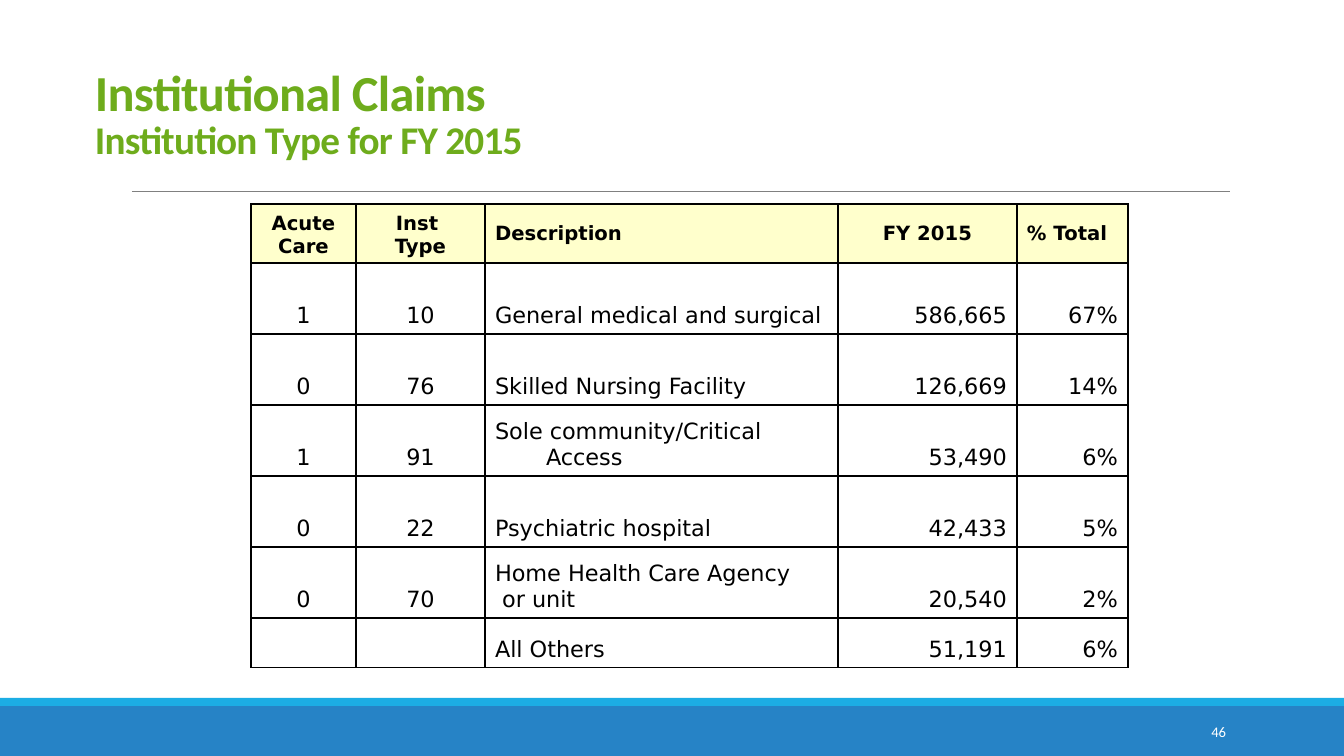
import pptx
import pptx.util
import pptx.dml.color
import pptx.enum.text
import pptx.enum.shapes
import pptx.oxml.ns
import lxml.etree

RGB = pptx.dml.color.RGBColor
ALIGN = pptx.enum.text.PP_ALIGN
ANCHOR = pptx.enum.text.MSO_ANCHOR

BLUE = RGB(0x26, 0x83, 0xC6)
SKY = RGB(0x1C, 0xAD, 0xE4)
GREEN = RGB(0x6E, 0xAC, 0x1C)
GRAY = RGB(0x80, 0x80, 0x80)
CREAM = RGB(0xFF, 0xFF, 0xCC)
WHITE = RGB(0xFF, 0xFF, 0xFF)
BLACK = RGB(0, 0, 0)

TITLE = "Institutional Claims\vInstitution Type for FY 2015"
PAGE = "46"
HEAD = ["Acute\nCare", "Inst \nType", "Description", "FY 2015", "% Total"]
CLAIMS = [
    ("1", "10", "General medical and surgical", "586,665", "67%"),
    ("0", "76", "Skilled Nursing Facility", "126,669", "14%"),
    ("1", "91", "Sole community/Critical Access", "53,490", "6%"),
    ("0", "22", "Psychiatric hospital", "42,433", "5%"),
    ("0", "70", "Home Health Care Agency\n or unit", "20,540", "2%"),
    ("", "", "All Others", "51,191", "6%"),
]
BANDS = [((0, 706, 1344, 50), BLUE), ((0, 698, 1344, 8), SKY)]
WIDTHS = [105, 129, 353, 179, 111]
HEIGHTS = [59, 71, 71, 71, 71, 71, 50]
HEAD_ALIGN = [ALIGN.CENTER, ALIGN.CENTER, ALIGN.LEFT, ALIGN.CENTER, ALIGN.LEFT]
BODY_ALIGN = [ALIGN.CENTER, ALIGN.CENTER, ALIGN.LEFT, ALIGN.RIGHT, ALIGN.RIGHT]
HEAD_ANCHOR = [ANCHOR.BOTTOM] * 2 + [ANCHOR.MIDDLE] * 3
HANG = 51


def px(n):
    return pptx.util.Emu(round(n * 914400 / 100.8))


def add(node, tag, **attrs):
    return lxml.etree.SubElement(node, pptx.oxml.ns.qn(tag), **attrs)


def write(frame, text, sizes, color, font="DejaVu Sans", bold=False,
          align=ALIGN.LEFT, space=None, track=None, hang=0):
    frame.word_wrap = True
    for i, part in enumerate(text.split("\n")):
        para = frame.add_paragraph() if i else frame.paragraphs[0]
        para.alignment = align
        para.line_spacing = space
        if hang:
            props = para._p.get_or_add_pPr()
            props.set("marL", str(px(hang)))
            props.set("indent", str(-px(hang)))
        for j, line in enumerate(part.split("\v")):
            if j:
                para.add_line_break()
            run = para.add_run()
            run.text = line
            run.font.name = font
            run.font.size = pptx.util.Pt(sizes[j])
            run.font.bold = bold
            run.font.color.rgb = color
            if track:
                run._r.get_or_add_rPr().set("spc", str(track))


def add_text(slide, box, text, sizes, color, anchor, **fmt):
    frame = slide.shapes.add_textbox(*map(px, box)).text_frame
    frame.vertical_anchor = anchor
    write(frame, text, sizes, color, font="Calibri", **fmt)


def add_frame(cell):
    props = cell._tc.get_or_add_tcPr()
    for i, side in enumerate("LRTB"):
        line = add(props, "a:ln" + side, w="12700")
        add(add(line, "a:solidFill"), "a:srgbClr", val=str(BLACK))
        props.insert(i, line)


def add_claims(slide):
    rows = [HEAD] + CLAIMS
    box = (251, 204, sum(WIDTHS), sum(HEIGHTS))
    table = slide.shapes.add_table(len(rows), len(HEAD), *map(px, box)).table
    table.first_row = table.horz_banding = False
    for col, width in zip(table.columns, WIDTHS):
        col.width = px(width)
    for r, row in enumerate(rows):
        table.rows[r].height = px(HEIGHTS[r])
        for c, text in enumerate(row):
            cell = table.cell(r, c)
            top = r == 0
            cell.fill.solid()
            cell.fill.fore_color.rgb = CREAM if top else WHITE
            cell.vertical_anchor = HEAD_ANCHOR[c] if top else ANCHOR.BOTTOM
            add_frame(cell)
            if text:
                write(cell.text_frame, text, [14 if top else 16], BLACK,
                      bold=top, hang=HANG,
                      align=(HEAD_ALIGN if top else BODY_ALIGN)[c])


def main():
    deck = pptx.Presentation()
    deck.slide_width, deck.slide_height = px(1344), px(756)
    slide = deck.slides.add_slide(deck.slide_layouts[6])
    for box, color in BANDS:
        band = slide.shapes.add_shape(
            pptx.enum.shapes.MSO_SHAPE.RECTANGLE, *map(px, box))
        band.shadow.inherit = False
        band.fill.solid()
        band.fill.fore_color.rgb = color
        band.line.fill.background()
    rule = slide.shapes.add_connector(
        pptx.enum.shapes.MSO_CONNECTOR.STRAIGHT, *map(px, (132, 191, 1230, 191)))
    rule.line.color.rgb = GRAY
    rule.line.width = pptx.util.Pt(0.5)
    add(rule._element.spPr, "a:effectLst")
    add_text(slide, (85, 33, 1176, 134), TITLE, [36, 28], GREEN, ANCHOR.BOTTOM,
             bold=True, space=0.85, track=-50)
    add_claims(slide)
    add_text(slide, (1092, 712, 144, 40), PAGE, [10.5], WHITE, ANCHOR.MIDDLE,
             align=ALIGN.RIGHT)
    deck.save("out.pptx")


if __name__ == "__main__":
    main()
